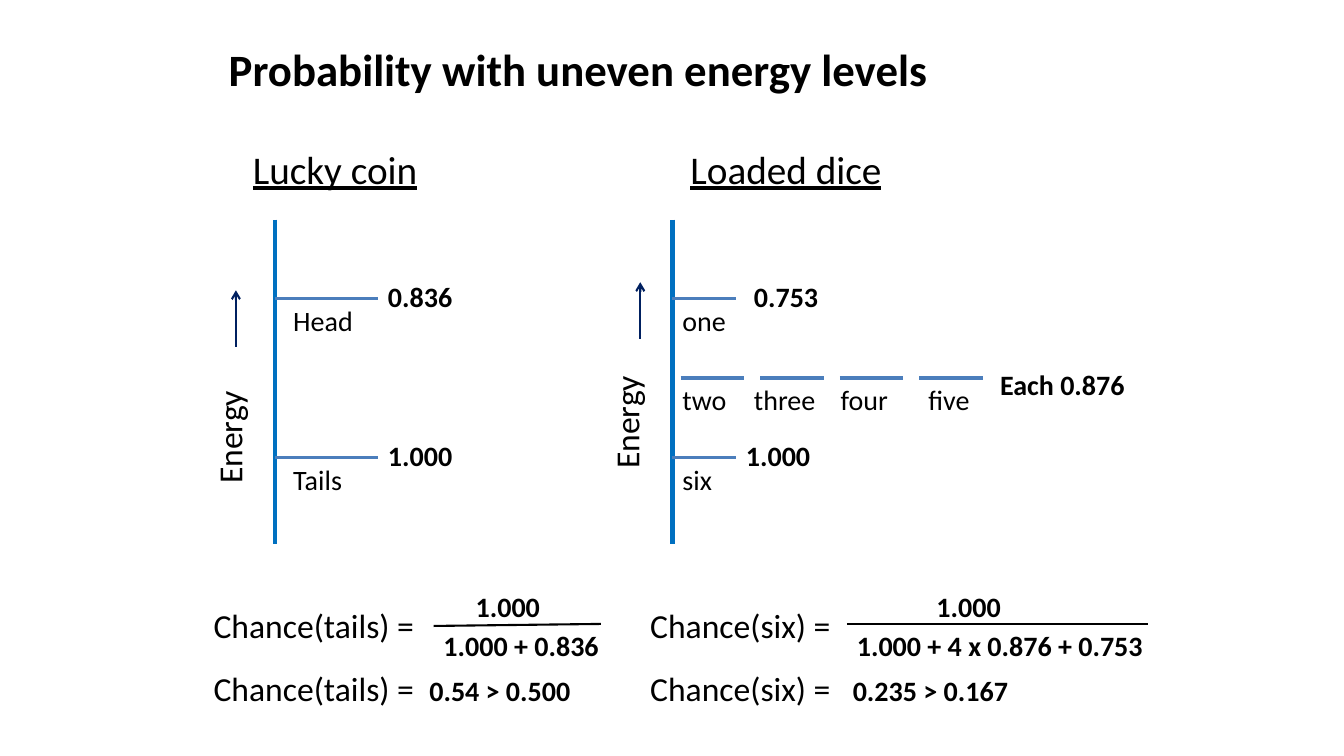
from lxml.etree import SubElement
from pptx import Presentation
from pptx.dml.color import RGBColor
from pptx.enum.shapes import MSO_CONNECTOR
from pptx.enum.text import MSO_ANCHOR, MSO_AUTO_SIZE
from pptx.oxml.ns import qn
from pptx.util import Inches, Pt

COLORS = {"text": "000000", "axis": "0070C0", "arrow": "002060", "level": "4B7EBC"}
FORMATS = {
    "title": {"size": Pt(32), "bold": True},
    "head": {"size": Pt(28), "underline": True},
    "large": {"size": Pt(24)},
    "label": {"size": Pt(20)},
    "value": {"size": Pt(20), "bold": True},
}


class Board:
    """Draws styled text and lines on one slide."""

    def __init__(self, slide):
        self.slide = slide
        self.shapes = slide.shapes

    def group(self):
        self.shapes = self.slide.shapes.add_group_shape().shapes

    def ungroup(self):
        self.shapes = self.slide.shapes

    def run(self, para, text, style):
        run = para.add_run()
        run.text = text
        for key, value in FORMATS[style].items():
            setattr(run.font, key, value)
        run.font.name = "Calibri"
        run.font.color.rgb = RGBColor.from_string(COLORS["text"])

    def text(self, text, style, x, y, w, h, wrap=True):
        box = self.shapes.add_textbox(Inches(x), Inches(y), Inches(w), Inches(h))
        frame = box.text_frame
        frame.word_wrap = wrap
        frame.auto_size = MSO_AUTO_SIZE.SHAPE_TO_FIT_TEXT
        self.run(frame.paragraphs[0], text, style)
        return box

    def title(self, text):
        frame = self.text(text, "title", 2.17, 0.3, 8.99, 0.77).text_frame
        frame.auto_size = MSO_AUTO_SIZE.NONE
        frame.vertical_anchor = MSO_ANCHOR.MIDDLE

    def label(self, text, x, y, w):
        self.text(text, "label", x, y, w, 0.44)

    def value(self, text, x, y, w=0.84):
        self.text(text, "value", x, y, w, 0.44, False)

    def line(self, x, y, end_x, end_y, color, width):
        line = self.shapes.add_connector(
            MSO_CONNECTOR.STRAIGHT, Inches(x), Inches(y), Inches(end_x), Inches(end_y)
        )
        line.line.color.rgb = RGBColor.from_string(COLORS[color])
        line.line.width = Pt(width)
        SubElement(line.element.spPr, qn("a:effectLst"))
        return line

    def level(self, x, y, w):
        self.line(x, y, x + w, y, "level", 2.25)

    def axis(self, x, arrow_x, arrow_y, label_y):
        self.line(x, 2.18, x, 5.4, "axis", 3)
        arrow = self.line(arrow_x, arrow_y, arrow_x, arrow_y - 0.56, "arrow", 1.5)
        SubElement(arrow.element.spPr.find(qn("a:ln")), qn("a:tailEnd"), type="arrow")
        box = self.text("Energy", "large", x - 0.71, label_y, 0.61, 1.31)
        box.element.txBody.bodyPr.set("vert", "vert270")

    def result(self, text, value, x, w, stop):
        box = self.text(text + "\t", "large", x, 6.58, w, 0.5)
        para = box.text_frame.paragraphs[0]
        self.run(para, value, "value")
        tabs = SubElement(para._p.get_or_add_pPr(), qn("a:tabLst"))
        SubElement(tabs, qn("a:tab"), pos=str(Inches(stop)), algn="l")

    def ratio(self, top, top_x, base, base_w, x, w, y):
        self.group()
        self.line(x, y, x + w, 6.19, "text", 1.5)
        self.value(top, top_x, 5.8)
        self.value(base, x, 6.19, base_w)
        self.ungroup()


def coin(board):
    x = 2.73
    board.text("Lucky coin", "head", 2.41, 1.39, 2.52, 0.57)
    board.axis(x, 2.34, 3.44, 3.59)
    for name, value, y in (("Head", "0.836", 2.96), ("Tails", "1.000", 4.54)):
        board.level(x, y, 1.02)
        board.label(name, 2.81, y, 0.81)
        board.value(value, 3.75, y - 0.24)


def dice(board):
    x = 6.67
    board.group()
    board.text("Loaded dice", "head", 6.75, 1.39, 4.57, 0.57)
    board.axis(x, 6.35, 3.36, 3.44)
    for name, value, y, left in (("one", "0.753", 2.96, 7.38), ("six", "1.000", 4.54, 7.3)):
        board.level(x, y, 0.63)
        board.label(name, x, y, 0.79)
        board.value(value, left, y - 0.24)
    names = (("two", 6.67), ("three", 7.38), ("four", 8.24), ("five", 9.11))
    for i, (name, left) in enumerate(names):
        board.level(6.75 + i * 0.79, 3.75, 0.63)
        board.label(name, left, 3.75, 0.87)
    board.value("Each 0.876", 9.82, 3.6, 1.44)
    board.ungroup()


def odds(board):
    for name, value, x, w, stop in (
        ("Chance(tails) =", "0.54 > 0.500", 2.02, 4.33, 2.14),
        ("Chance(six) =", "0.235 > 0.167", 6.35, 4.49, 2.01),
    ):
        board.text(name, "large", x, 5.95, 2.44, 0.5)
        board.result(name, value, x, w, stop)
    board.ratio("1.000", 4.62, "1.000 + 0.836", 1.89, 4.3, 1.66, 6.21)
    board.ratio("1.000", 9.19, "1.000 + 4 x 0.876 + 0.753", 3.05, 8.4, 2.99, 6.19)


def main():
    deck = Presentation()
    deck.slide_width, deck.slide_height = Inches(13.33), Inches(7.5)
    board = Board(deck.slides.add_slide(deck.slide_layouts[6]))
    board.title("Probability with uneven energy levels")
    coin(board)
    dice(board)
    odds(board)
    deck.save("out.pptx")


if __name__ == "__main__":
    main()
